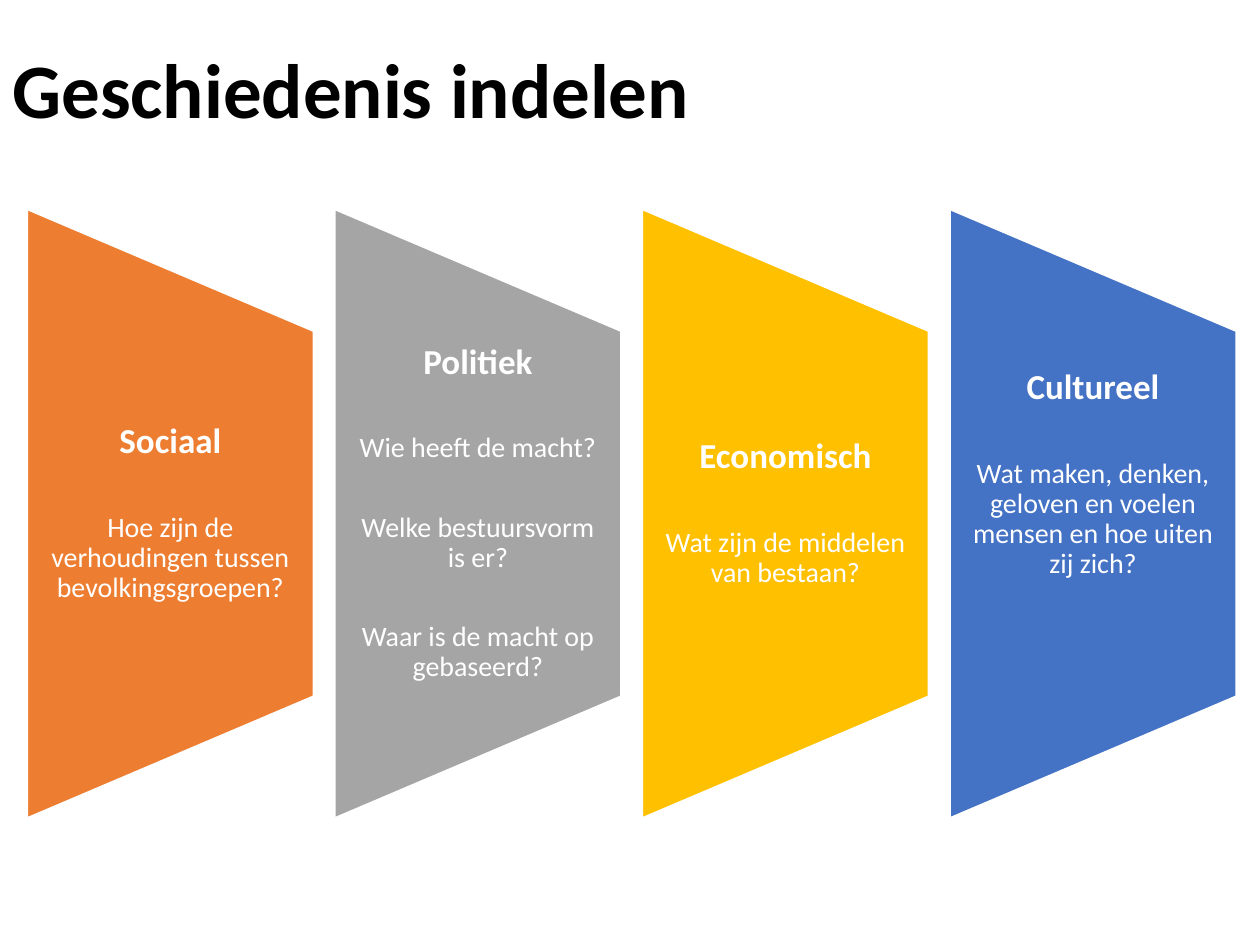
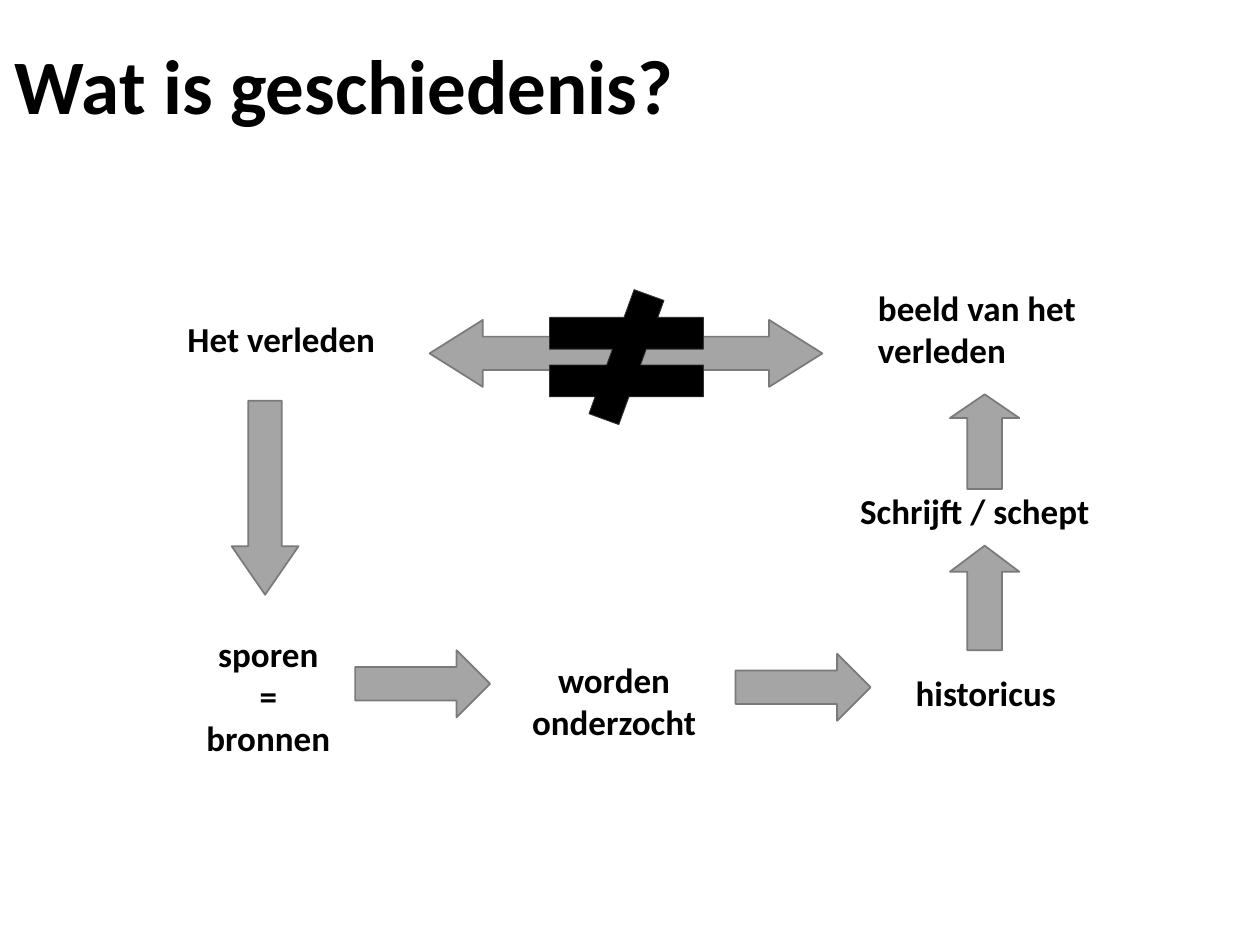
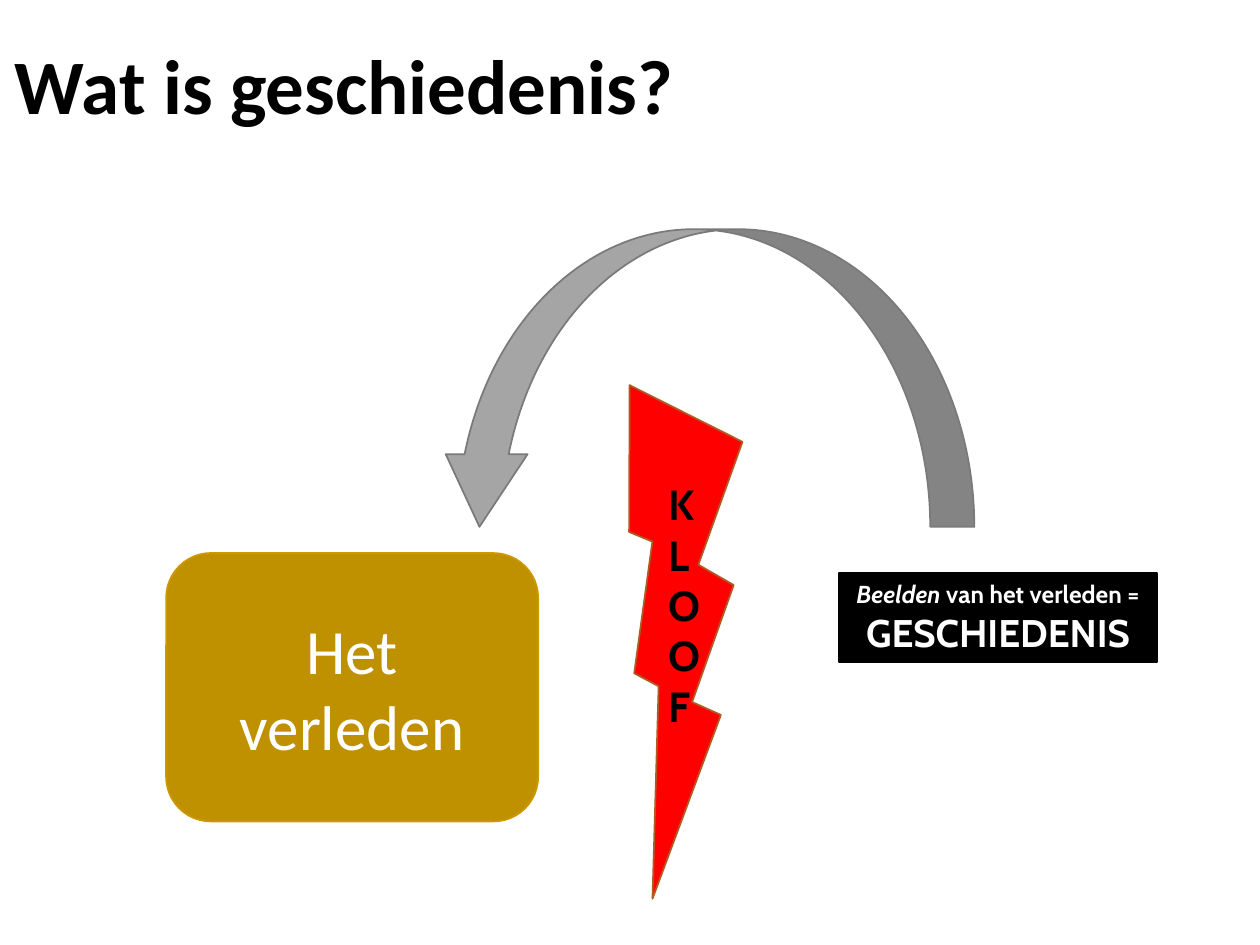
from pptx import Presentation
from pptx.dml.color import RGBColor
from pptx.enum.shapes import MSO_SHAPE
from pptx.enum.text import MSO_ANCHOR, MSO_AUTO_SIZE, PP_ALIGN
from pptx.util import Cm, Pt

COLORS = {
    "black": "000000", "white": "FFFFFF", "orange": "ED7D31", "gray": "A5A5A5",
    "yellow": "FFC000", "blue": "4472C4", "gray_edge": "7A7A7A",
    "symbol_edge": "313231", "red": "FF0000", "bolt_edge": "AF5C24",
    "gold": "BF9000", "gold_edge": "CC9900",
}
FONT = "Calibri"
ACCENT_FONT = "Cabin"
INSET = (0.25, 0.13, 0.25, 0.13)
TITLE_ONLY = 5


def rgb(name):
    return RGBColor.from_string(COLORS[name])


def write_text(shape, paragraphs, size=20, color="black", font=FONT, bold=False,
               align=PP_ALIGN.LEFT, anchor=MSO_ANCHOR.TOP, spacing=None, inset=INSET):
    """Each paragraph is a list of (text, overrides) runs, or one plain string."""
    frame = shape.text_frame
    frame.word_wrap = True
    frame.auto_size = MSO_AUTO_SIZE.NONE
    frame.vertical_anchor = anchor
    frame.margin_left, frame.margin_top, frame.margin_right, frame.margin_bottom = map(Cm, inset)
    for index, runs in enumerate(paragraphs):
        paragraph = frame.add_paragraph() if index else frame.paragraphs[0]
        paragraph.alignment = align
        if spacing:
            paragraph.line_spacing = spacing
        for text, own in [(runs, {})] if isinstance(runs, str) else runs:
            run = paragraph.add_run()
            run.text = text
            run.font.name = font
            run.font.size = Pt(own.get("size", size))
            run.font.bold = own.get("bold", bold)
            run.font.italic = own.get("italic", False)
            run.font.color.rgb = rgb(color)
    return frame


def add_label(slide, box, paragraphs, **style):
    return write_text(slide.shapes.add_textbox(*map(Cm, box)), paragraphs, **style)


def add_block(slide, kind, box, fill="gray", edge="gray_edge", edge_width=1,
              rotation=0, adjust=()):
    block = slide.shapes.add_shape(kind, *map(Cm, box))
    block.shadow.inherit = False
    block.fill.solid()
    block.fill.fore_color.rgb = rgb(fill)
    block.line.color.rgb = rgb(edge)
    block.line.width = Pt(edge_width)
    block.rotation = rotation
    for index, value in enumerate(adjust):
        block.adjustments[index] = value
    return block


def add_titled_slide(deck, text, left=0.05, top=-0.03):
    slide = deck.slides.add_slide(deck.slide_layouts[TITLE_ONLY])
    title = slide.shapes.title
    title.left, title.top, title.width, title.height = map(Cm, (left, top, 25.4 - left, 3.68))
    write_text(title, [text], size=44, bold=True, anchor=MSO_ANCHOR.MIDDLE, spacing=0.9)
    return slide


def add_domain(slide, box, color, heading, questions, bottom_inset):
    """A trapezium standing on its side, with a heading and questions."""
    left, top, width, height = box
    # The shape is turned a quarter, so its sides swap around the same centre
    turned = (left + (width - height) / 2, top + (height - width) / 2, height, width)
    add_block(slide, MSO_SHAPE.FLOWCHART_MANUAL_OPERATION, turned, color, "white", rotation=270)
    frame = add_label(
        slide, (left, top + height / 5, width, height * 0.6),
        [[(heading, {"size": 20, "bold": True})], *questions],
        size=16, color="white", align=PP_ALIGN.CENTER, anchor=MSO_ANCHOR.MIDDLE,
        spacing=0.9, inset=(0.36, 0, 0.36, bottom_inset))
    for index, paragraph in enumerate(frame.paragraphs[:-1]):
        paragraph.space_after = Pt(28 if index else 29.5)


def domains_slide(deck):
    slide = add_titled_slide(deck, "Geschiedenis indelen", left=0, top=0.05)
    domains = [
        ("orange", "Sociaal", ["Hoe zijn de verhoudingen tussen bevolkingsgroepen?"], 0),
        ("gray", "Politiek", ["Wie heeft de macht?", "Welke bestuursvorm is er?",
                              "Waar is de macht op gebaseerd?"], 0),
        ("yellow", "Economisch", ["Wat zijn de middelen van bestaan?"], 0),
        ("blue", "Cultureel", ["Wat maken, denken, geloven en voelen mensen "
                               "en hoe uiten zij zich?"], 1.57),
    ]
    for column, domain in enumerate(domains):
        add_domain(slide, (0.55 + 6.2 * column, 4.22, 5.77, 12.27), *domain)


def add_cycle(slide, left, top):
    """The route from past to image of the past, placed from its top left corner."""
    def place(x, y, width, height):
        return left + x, top + y, width, height

    # Arrows between the steps
    arrows = [
        (MSO_SHAPE.DOWN_ARROW, (1.14, 2.44, 1.35, 3.91), 0.725),
        (MSO_SHAPE.RIGHT_ARROW, (3.63, 7.47, 2.72, 1.35), 0.5),
        (MSO_SHAPE.RIGHT_ARROW, (11.3, 7.54, 2.72, 1.35), 0.5),
        (MSO_SHAPE.UP_ARROW, (15.62, 5.36, 1.4, 2.11), 0.377),
        (MSO_SHAPE.UP_ARROW, (15.62, 2.31, 1.4, 1.91), 0.342),
        (MSO_SHAPE.LEFT_RIGHT_ARROW, (5.13, 0.81, 7.92, 1.35), 0.796),
    ]
    for kind, box, head in arrows:
        add_block(slide, kind, place(*box), adjust=(0.5, head))

    # Steps
    steps = [
        (["Het verleden"], (0, 0.63, 6.65, 1.12), PP_ALIGN.LEFT),
        (["sporen", "=", "bronnen"], (0.23, 6.98, 3.3, 2.82), PP_ALIGN.CENTER),
        (["worden onderzocht"], (6.65, 7.5, 4.4, 1.96), PP_ALIGN.CENTER),
        (["historicus"], (14.68, 7.77, 3.76, 1.12), PP_ALIGN.LEFT),
        (["Schrijft / schept"], (13.56, 4.09, 6.5, 1.12), PP_ALIGN.LEFT),
        (["beeld van het", "verleden"], (13.92, 0, 5.28, 1.96), PP_ALIGN.LEFT),
    ]
    for lines, box, align in steps:
        add_label(slide, place(*box), lines, bold=True, align=align)

    # The past is not its image
    add_block(slide, MSO_SHAPE.MATH_NOT_EQUAL, place(6.99, 0.2, 4.22, 2.72),
              "black", "symbol_edge", 0.5)


def cycle_slide(deck):
    add_cycle(add_titled_slide(deck, "Wat is geschiedenis?"), 3.53, 5.64)


def add_gap(slide, left, top):
    """The gap between past and history, placed from its top left corner."""
    def place(x, y, width, height):
        return left + x, top + y, width, height

    # Gap
    bolt = add_block(slide, MSO_SHAPE.LIGHTNING_BOLT, place(8.13, 3.05, 4.6, 9.98),
                     "red", "bolt_edge", rotation=341.8)
    bolt.element.spPr.xfrm.set("flipH", "1")
    add_label(slide, place(9.88, 4.9, 1.19, 5.38), list("KLOOF"),
              size=24, font=ACCENT_FONT, bold=True)

    # History
    history = add_block(slide, MSO_SHAPE.RECTANGLE, place(13.57, 6.93, 6.4, 1.8),
                        "black", "black")
    write_text(history, [[("Beelden", {"italic": True}), (" van het verleden =", {})],
                         [("GESCHIEDENIS", {"size": 22})]],
               size=14, color="white", font=ACCENT_FONT, bold=True, align=PP_ALIGN.CENTER)

    # Looking back
    add_block(slide, MSO_SHAPE.CURVED_UP_ARROW, place(5.49, 0, 10.8, 6),
              rotation=180, adjust=(0.148, 0.275, 0.244))

    # Past
    past = add_block(slide, MSO_SHAPE.ROUNDED_RECTANGLE, place(0, 6.53, 7.5, 5.41),
                     "gold", "gold_edge")
    write_text(past, ["Het verleden"], size=36, color="white",
               align=PP_ALIGN.CENTER, anchor=MSO_ANCHOR.MIDDLE)


def gap_slide(deck):
    add_gap(add_titled_slide(deck, "Wat is geschiedenis?"), 3.35, 4.62)


def main():
    deck = Presentation()
    deck.slide_width, deck.slide_height = Cm(25.4), Cm(19.05)
    for build in (domains_slide, cycle_slide, gap_slide):
        build(deck)
    deck.save("out.pptx")


if __name__ == "__main__":
    main()
